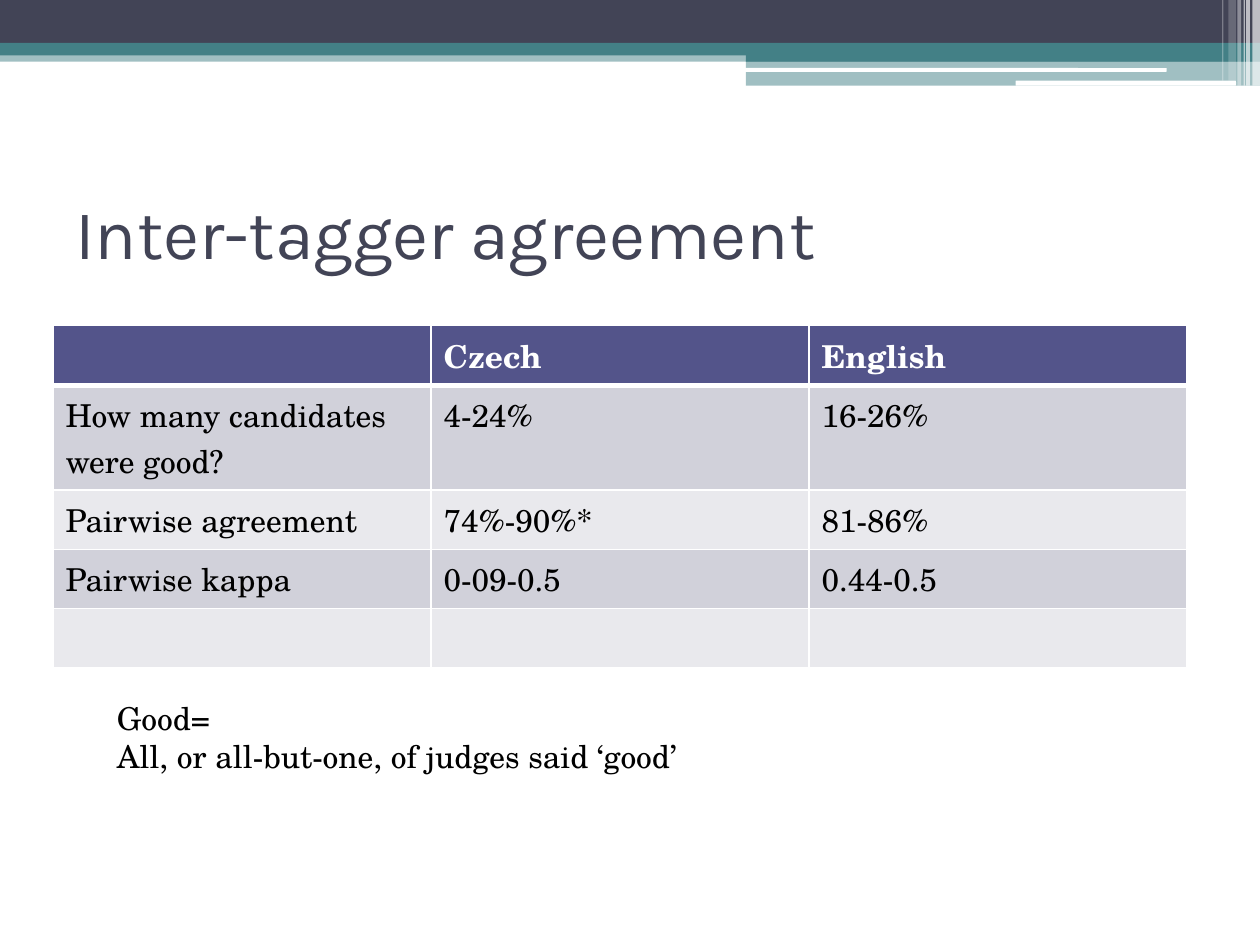
from dataclasses import dataclass
from typing import Any

from lxml import etree
from pptx import Presentation
from pptx.dml.color import RGBColor
from pptx.enum.shapes import MSO_SHAPE
from pptx.enum.text import MSO_ANCHOR
from pptx.oxml.ns import qn
from pptx.util import Inches, Pt

RECTANGLE = MSO_SHAPE.RECTANGLE
ROUNDED = MSO_SHAPE.ROUNDED_RECTANGLE
MIDDLE = MSO_ANCHOR.MIDDLE
TOP = MSO_ANCHOR.TOP

WHITE = RGBColor(0xFF, 0xFF, 0xFF)
BLACK = RGBColor(0x00, 0x00, 0x00)
SLATE = RGBColor(0x42, 0x44, 0x56)
TEAL = RGBColor(0x43, 0x80, 0x86)
INDIGO = RGBColor(0x53, 0x54, 0x8A)
BAND_DARK = RGBColor(0xD1, 0xD1, 0xDA)
BAND_LIGHT = RGBColor(0xE9, 0xE9, 0xED)

TITLE_FONT = {"name": "Karla", "size": Pt(40), "bold": False}
BODY_FONT = {"name": "TeX Gyre Schola", "size": Pt(18), "bold": False}
HEADER_FONT = {**BODY_FONT, "bold": True}
CELL_FORMAT = {"margin_top": Inches(0.05), "margin_bottom": Inches(0.05), "vertical_anchor": TOP}


@dataclass(frozen=True)
class Band:
    left: float
    top: float
    width: float
    height: float
    color: RGBColor
    opacity: int = 100
    outline: Any = RECTANGLE


@dataclass(frozen=True)
class TextBlock:
    left: float
    top: float
    width: float
    height: float
    lines: tuple[str, ...]
    font: dict[str, Any]
    color: RGBColor
    anchor: Any = TOP


BANNER = (
    Band(0, 0.4, 10, 0.09, TEAL, 50),
    Band(0, 0, 10, 0.34, SLATE),
    Band(0, 0.34, 10, 0.1, TEAL),
    Band(5.92, 0.39, 4.08, 0.1, TEAL),
    Band(5.92, 0.48, 4.08, 0.2, TEAL, 50),
    Band(5.91, 0.54, 3.35, 0.03, WHITE, outline=ROUNDED),
    Band(8.06, 0.64, 1.75, 0.04, WHITE, outline=ROUNDED),
    Band(9.94, 0, 0.06, 0.68, WHITE, 65),
    Band(9.89, 0, 0.03, 0.68, WHITE, 65),
    Band(9.87, 0, 0.01, 0.68, WHITE, 60),
    Band(9.82, 0, 0.03, 0.68, WHITE, 40),
    Band(9.75, 0, 0.06, 0.64, WHITE, 20),
    Band(9.7, 0, 0.01, 0.64, WHITE, 30),
)
TITLE = TextBlock(0.5, 1.25, 9, 1.17, ("Inter-tagger agreement",), TITLE_FONT, SLATE, MIDDLE)
DEFINITION = TextBlock(
    0.83, 5.5, 8, 0.71,
    ("Good=", "All, or all-but-one, of judges said ‘good’"), BODY_FONT, BLACK,
)
AGREEMENT = (
    ("", "Czech", "English"),
    ("How many candidates were good?", "4-24%", "16-26%"),
    ("Pairwise agreement", "74%-90%*", "81-86%"),
    ("Pairwise kappa", "0-09-0.5", "0.44-0.5"),
    ("", "", ""),
)
ROW_HEIGHTS = (0.48, 0.83, 0.47, 0.47, 0.47)
COLUMN_WIDTH = 3


def apply_format(target: Any, values: dict[str, Any]) -> None:
    for attribute, value in values.items():
        setattr(target, attribute, value)


def box(part: Any) -> tuple[int, ...]:
    return tuple(Inches(n) for n in (part.left, part.top, part.width, part.height))


def draw_band(slide: Any, band: Band) -> None:
    shape = slide.shapes.add_shape(band.outline, *box(band))
    shape.shadow.inherit = False
    shape.line.fill.background()
    shape.fill.solid()
    shape.fill.fore_color.rgb = band.color
    if band.opacity < 100:
        color = shape.fill._xPr.find(f".//{qn('a:srgbClr')}")
        etree.SubElement(color, qn("a:alpha"), val=str(band.opacity * 1000))


def draw_text(slide: Any, block: TextBlock) -> None:
    frame = slide.shapes.add_textbox(*box(block)).text_frame
    apply_format(frame, {"word_wrap": True, "vertical_anchor": block.anchor})
    frame.text = "\n".join(block.lines)
    for paragraph in frame.paragraphs:
        apply_format(paragraph.font, block.font)
        paragraph.font.color.rgb = block.color


def add_border(cell: Any, side: str, points: int) -> None:
    properties = cell._tc.get_or_add_tcPr()
    line = etree.SubElement(properties, qn(f"a:ln{side}"), w=str(Pt(points)))
    fill = etree.SubElement(line, qn("a:solidFill"))
    etree.SubElement(fill, qn("a:srgbClr"), val=str(WHITE))


def fill_cell(cell: Any, text: str, row: int) -> None:
    header = row == 0
    apply_format(cell, CELL_FORMAT)
    cell.text = text
    font = cell.text_frame.paragraphs[0].font
    apply_format(font, HEADER_FONT if header else BODY_FONT)
    font.color.rgb = WHITE if header else BLACK
    for side, points in {"L": 1, "R": 1, "T": 3 if row == 1 else 1, "B": 3 if header else 1}.items():
        add_border(cell, side, points)
    cell.fill.solid()
    cell.fill.fore_color.rgb = INDIGO if header else (BAND_LIGHT, BAND_DARK)[row % 2]


def draw_agreement(slide: Any) -> None:
    columns = len(AGREEMENT[0])
    table = slide.shapes.add_table(
        len(AGREEMENT), columns, Inches(0.42), Inches(2.58),
        Inches(COLUMN_WIDTH * columns), Inches(sum(ROW_HEIGHTS)),
    ).table
    for row, (values, height) in enumerate(zip(AGREEMENT, ROW_HEIGHTS)):
        table.rows[row].height = Inches(height)
        for column, text in enumerate(values):
            fill_cell(table.cell(row, column), text, row)


def main() -> None:
    presentation = Presentation()
    apply_format(presentation, {"slide_width": Inches(10), "slide_height": Inches(7.5)})
    slide = presentation.slides.add_slide(presentation.slide_layouts[6])
    for band in BANNER:
        draw_band(slide, band)
    draw_text(slide, TITLE)
    draw_agreement(slide)
    draw_text(slide, DEFINITION)
    presentation.save("out.pptx")


if __name__ == "__main__":
    main()
